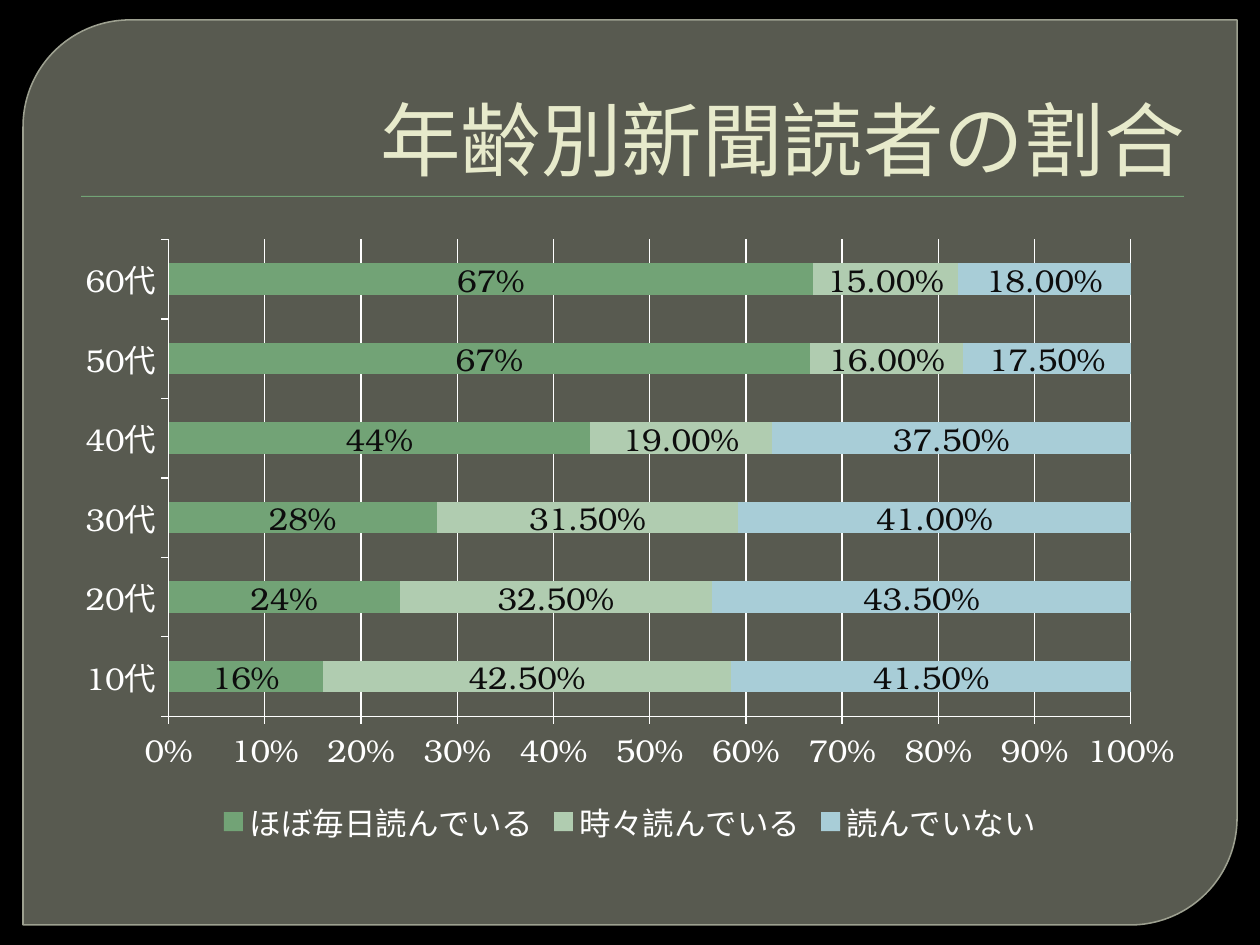
"""Build the slide on newspaper readers by age."""
from dataclasses import dataclass

from pptx import Presentation
from pptx.chart.data import CategoryChartData
from pptx.dml.color import RGBColor
from pptx.enum.chart import XL_CHART_TYPE, XL_LABEL_POSITION, XL_LEGEND_POSITION, XL_TICK_MARK
from pptx.enum.shapes import MSO_SHAPE
from pptx.enum.text import MSO_ANCHOR, PP_ALIGN
from pptx.oxml.ns import qn
from pptx.oxml.xmlchemy import OxmlElement
from pptx.util import Pt

SCALE = 914400 / 126
FACE = "TeX Gyre Bonum"
HUES = {
    "back": "000000", "panel": "888B7B", "edge": "9DA090", "title": "E7EACB",
    "white": "FFFFFF", "label": "0D0D0D",
    "daily": "72A376", "some": "B0CCB0", "none": "A8CDD7",
}
AGES = [f"{age}代" for age in range(10, 70, 10)]


@dataclass
class Box:
    left: int
    top: int
    width: int
    height: int

    def emu(self) -> list[int]:
        return [px(n) for n in (self.left, self.top, self.width, self.height)]


@dataclass
class Plate:
    kind: MSO_SHAPE
    box: Box
    fill: str
    solid: int = 100
    edge: str = ""
    bends: tuple = ()


@dataclass
class Group:
    name: str
    hue: str
    form: str
    vals: tuple


PLATES = [
    Plate(MSO_SHAPE.ROUND_2_DIAG_RECTANGLE, Box(23, 20, 1214, 905), "panel", 65, "edge", (0.118, 0)),
    Plate(MSO_SHAPE.RECTANGLE, Box(81, 196, 1103, 1), "daily"),
]
GROUPS = [
    Group("ほぼ毎日読んでいる", "daily", "0%", (0.16, 0.24, 0.28, 0.44, 0.67, 0.67)),
    Group("時々読んでいる", "some", "0.00%", (0.425, 0.325, 0.315, 0.19, 0.16, 0.15)),
    Group("読んでいない", "none", "0.00%", (0.415, 0.435, 0.41, 0.375, 0.175, 0.18)),
]


def px(n: int) -> int:
    return round(n * SCALE)


def hue(name: str) -> RGBColor:
    return RGBColor.from_string(HUES[name])


def put(item: object, form: dict) -> None:
    for key, val in form.items():
        setattr(item, key, val)


def style(font: object, size: int, name: str) -> None:
    put(font, {"size": Pt(size), "name": FACE, "bold": False})
    font.color.rgb = hue(name)


def paint(fill: object, name: str) -> None:
    fill.solid()
    fill.fore_color.rgb = hue(name)


def fade(shape: object, solid: int) -> None:
    for node in shape.fill._xPr.find(qn("a:solidFill")):
        alpha = OxmlElement("a:alpha")
        alpha.set("val", str(solid * 1000))
        node.append(alpha)


def draw_plate(slide: object, plate: Plate) -> None:
    shape = slide.shapes.add_shape(plate.kind, *plate.box.emu())
    shape.shadow.inherit = False
    for i, bend in enumerate(plate.bends):
        shape.adjustments[i] = bend
    paint(shape.fill, plate.fill)
    if plate.solid < 100:
        fade(shape, plate.solid)
    if plate.edge:
        shape.line.width = Pt(0.87)
        shape.line.color.rgb = hue(plate.edge)
    else:
        shape.line.fill.background()


def draw_title(slide: object, text: str, box: Box) -> None:
    frame = slide.shapes.add_textbox(*box.emu()).text_frame
    put(frame, {"word_wrap": True, "vertical_anchor": MSO_ANCHOR.BOTTOM})
    para = frame.paragraphs[0]
    para.alignment = PP_ALIGN.RIGHT
    run = para.add_run()
    run.text = text
    style(run.font, 46, "title")


def draw_chart(slide: object, box: Box) -> None:
    data = CategoryChartData()
    data.categories = AGES
    for group in GROUPS:
        data.add_series(group.name, group.vals, group.form)
    kind = XL_CHART_TYPE.BAR_STACKED_100
    chart = slide.shapes.add_chart(kind, *box.emu(), data).chart
    put(chart, {"has_title": False, "has_legend": True})
    style(chart.font, 10, "white")
    put(chart.legend, {"position": XL_LEGEND_POSITION.BOTTOM, "include_in_layout": False})
    style(chart.legend.font, 18, "white")
    plot = chart.plots[0]
    put(plot, {"gap_width": 150, "overlap": 100, "vary_by_categories": False})
    for axis, grid in ((chart.category_axis, False), (chart.value_axis, True)):
        put(axis, {"major_tick_mark": XL_TICK_MARK.OUTSIDE,
                   "minor_tick_mark": XL_TICK_MARK.NONE, "has_major_gridlines": grid})
        style(axis.tick_labels.font, 18, "white")
        lines = [axis.format.line] + ([axis.major_gridlines.format.line] if grid else [])
        for line in lines:
            line.width = Pt(0.75)
            line.color.rgb = hue("white")
    put(chart.value_axis, {"minimum_scale": 0, "maximum_scale": 1, "major_unit": 0.1})
    put(chart.value_axis.tick_labels, {"number_format": "0%", "number_format_is_linked": False})
    for row, group in zip(plot.series, GROUPS):
        paint(row.format.fill, group.hue)
        put(row.data_labels, {"show_value": True, "number_format": group.form,
                              "number_format_is_linked": False,
                              "position": XL_LABEL_POSITION.CENTER})
        style(row.data_labels.font, 18, "label")


def main() -> None:
    deck = Presentation()
    put(deck, {"slide_width": px(1260), "slide_height": px(945)})
    slide = deck.slides.add_slide(deck.slide_layouts[6])
    paint(slide.background.fill, "back")
    for plate in PLATES:
        draw_plate(slide, plate)
    draw_title(slide, "年齢別新聞読者の割合", Box(63, 35, 1134, 158))
    draw_chart(slide, Box(63, 227, 1134, 624))
    deck.save("out.pptx")


if __name__ == "__main__":
    main()
